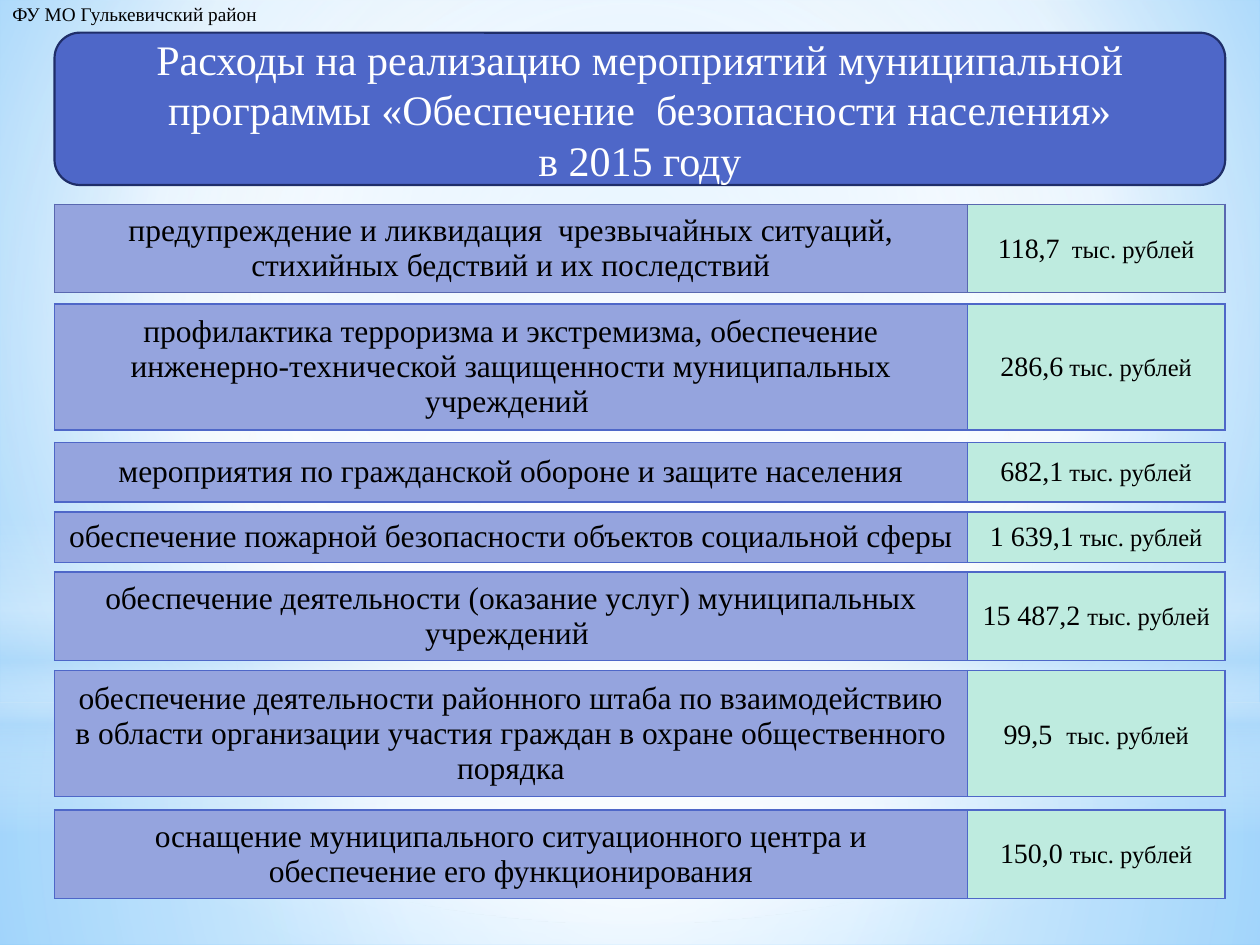
from pptx import Presentation
from pptx import util as u
from pptx.dml import color
from pptx.enum import shapes, text
from pptx.oxml import ns, parse_xml

FONT = "Times New Roman"
BLUE, SLATE, NAVY = "4E67C8", "5968B0", "1F2E69"
LILAC, MINT = "95A4DE", "BEEBDF"
hex_color = color.RGBColor.from_string


def gradient(stops, center=None):
    """Gradient from (position, colour, opacity) in percent; linear without a center."""
    marks = "".join(
        f'<a:gs pos="{pos * 1000}"><a:srgbClr val="{tone}">'
        f'<a:alpha val="{opacity * 1000}"/></a:srgbClr></a:gs>'
        for pos, tone, opacity in stops)
    if center:
        l, t, r, b = (side * 1000 for side in center)
        course = (f'<a:path path="circle"><a:fillToRect l="{l}" t="{t}" '
                  f'r="{r}" b="{b}"/></a:path>')
    else:
        course = '<a:lin ang="5400000" scaled="0"/>'
    return parse_xml(f'<a:gradFill {ns.nsdecls("a")} rotWithShape="1">'
                     f'<a:gsLst>{marks}</a:gsLst>{course}</a:gradFill>')


def add_span(para, words, size, tone="000000"):
    span = para.add_run()
    span.text = words
    span.font.name = FONT
    span.font.size = u.Pt(size)
    span.font.color.rgb = hex_color(tone)


deck = Presentation()
deck.slide_width, deck.slide_height = u.Cm(25.4), u.Cm(19.05)
page = deck.slides.add_slide(deck.slide_layouts[6])

# Background
page.background.fill.solid()
back = page._element.find(".//" + ns.qn("p:bgPr"))
back.replace(back[0], gradient(
    [(0, "9ED5FF", 100), (60, "FFFFFF", 100), (100, "5BB9FF", 100)], (20, 10, 20, 60)))

# Soft light layers: shape, top, height, stops, center
MIDDLE = (50, 50, 50, 50)
RECT, OVAL = shapes.MSO_SHAPE.RECTANGLE, shapes.MSO_SHAPE.OVAL
layers = [
    (RECT, 14.17, 4.88,
     [(0, "FFFFFF", 91), (37, "FFFFFF", 76), (100, "B4DCFA", 79)], MIDDLE),
    (RECT, 0, 14.17,
     [(0, "FFFFFF", 89), (48, "FFFFFF", 62), (100, "B4DCFA", 79)], MIDDLE),
    (RECT, 10.46, 6.35,
     [(0, "FFFFFF", 0), (29, "FFFFFF", 30), (45, "B4DCFA", 40),
      (55, "FFFFFF", 26), (65, "B4DCFA", 60), (100, "FFFFFF", 0)], None),
    (OVAL, 4.45, 14.17, [(0, "FFFFFF", 100), (56, "FFFFFF", 0)], MIDDLE),
]
for kind, top, height, stops, center in layers:
    layer = page.shapes.add_shape(kind, 0, u.Cm(top), deck.slide_width, u.Cm(height))
    layer._element.spPr.append(gradient(stops, center))
    layer.line.fill.background()
    layer.shadow.inherit = False

# Office name in the corner
box = page.shapes.add_textbox(0, u.Cm(-0.08), u.Cm(5.54), u.Cm(0.73))
box.text_frame.word_wrap = False
box.text_frame.auto_size = text.MSO_AUTO_SIZE.SHAPE_TO_FIT_TEXT
add_span(box.text_frame.paragraphs[0], "ФУ МО Гулькевичский район", 11)

# Title
LEFT, COLUMNS = 1.1, (18.4, 5.2)
title = page.shapes.add_shape(shapes.MSO_SHAPE.ROUNDED_RECTANGLE, u.Cm(LEFT), u.Cm(0.66),
                              u.Cm(sum(COLUMNS)), u.Cm(3.07))
title.shadow.inherit = False
title.fill.solid()
title.fill.fore_color.rgb = hex_color(BLUE)
title.line.color.rgb = hex_color(NAVY)
title.line.width = u.Pt(1.25)
frame = title.text_frame
frame.word_wrap = True
frame.vertical_anchor = text.MSO_ANCHOR.MIDDLE
title_lines = [
    "Расходы на реализацию мероприятий муниципальной "
    "программы «Обеспечение  безопасности населения»",
    "в 2015 году",
]
for number, line in enumerate(title_lines):
    para = frame.add_paragraph() if number else frame.paragraphs[0]
    para.alignment = text.PP_ALIGN.CENTER
    add_span(para, line, 24, "FFFFFF")

# Expense tables: top, height, border, purpose, amount spans
expenses = [
    (4.12, 1.78, SLATE,
     "предупреждение и ликвидация  чрезвычайных ситуаций, "
     "стихийных бедствий и их последствий",
     [("118,7", 16), ("  тыс. рублей", 14)]),
    (6.13, 2.54, BLUE,
     "профилактика терроризма и экстремизма, обеспечение "
     "инженерно-технической защищенности муниципальных учреждений ",
     [("286,6", 16), (" тыс. рублей", 14)]),
    (8.92, 1.2, BLUE,
     "мероприятия по гражданской обороне и защите населения",
     [("682,1", 16), (" тыс. рублей", 14)]),
    (10.32, 1.02, BLUE,
     "обеспечение пожарной безопасности объектов социальной сферы",
     [("1 639,1", 16), (" тыс. рублей", 14)]),
    (11.53, 1.78, BLUE,
     "обеспечение деятельности (оказание услуг) муниципальных учреждений ",
     [("15 487,2 ", 16), ("тыс. рублей", 14)]),
    (13.52, 2.54, BLUE,
     "обеспечение деятельности районного штаба по взаимодействию в "
     "области организации участия граждан в охране общественного порядка",
     [("99,5", 16), (" ", 18), (" тыс. рублей", 14)]),
    (16.33, 1.78, BLUE,
     "оснащение муниципального ситуационного центра и "
     "обеспечение его функционирования",
     [("150,0 ", 16), ("тыс. рублей", 14)]),
]
for top, height, border, purpose, amount in expenses:
    table = page.shapes.add_table(1, 2, u.Cm(LEFT), u.Cm(top),
                                  u.Cm(sum(COLUMNS)), u.Cm(height)).table
    table.first_row = table.horz_banding = False
    contents = [([(purpose, 18)], LILAC), (amount, MINT)]
    for column, (spans, fill) in enumerate(contents):
        table.columns[column].width = u.Cm(COLUMNS[column])
        cell = table.cell(0, column)
        cell.vertical_anchor = text.MSO_ANCHOR.MIDDLE
        cell.fill.solid()
        cell.fill.fore_color.rgb = hex_color(fill)
        for order, side in enumerate("LRTB"):
            cell._tc.tcPr.insert(order, parse_xml(
                f'<a:ln{side} {ns.nsdecls("a")} w="12700"><a:solidFill>'
                f'<a:srgbClr val="{border}"/></a:solidFill></a:ln{side}>'))
        para = cell.text_frame.paragraphs[0]
        para.alignment = text.PP_ALIGN.CENTER
        for words, size in spans:
            add_span(para, words, size)

deck.save("out.pptx")
